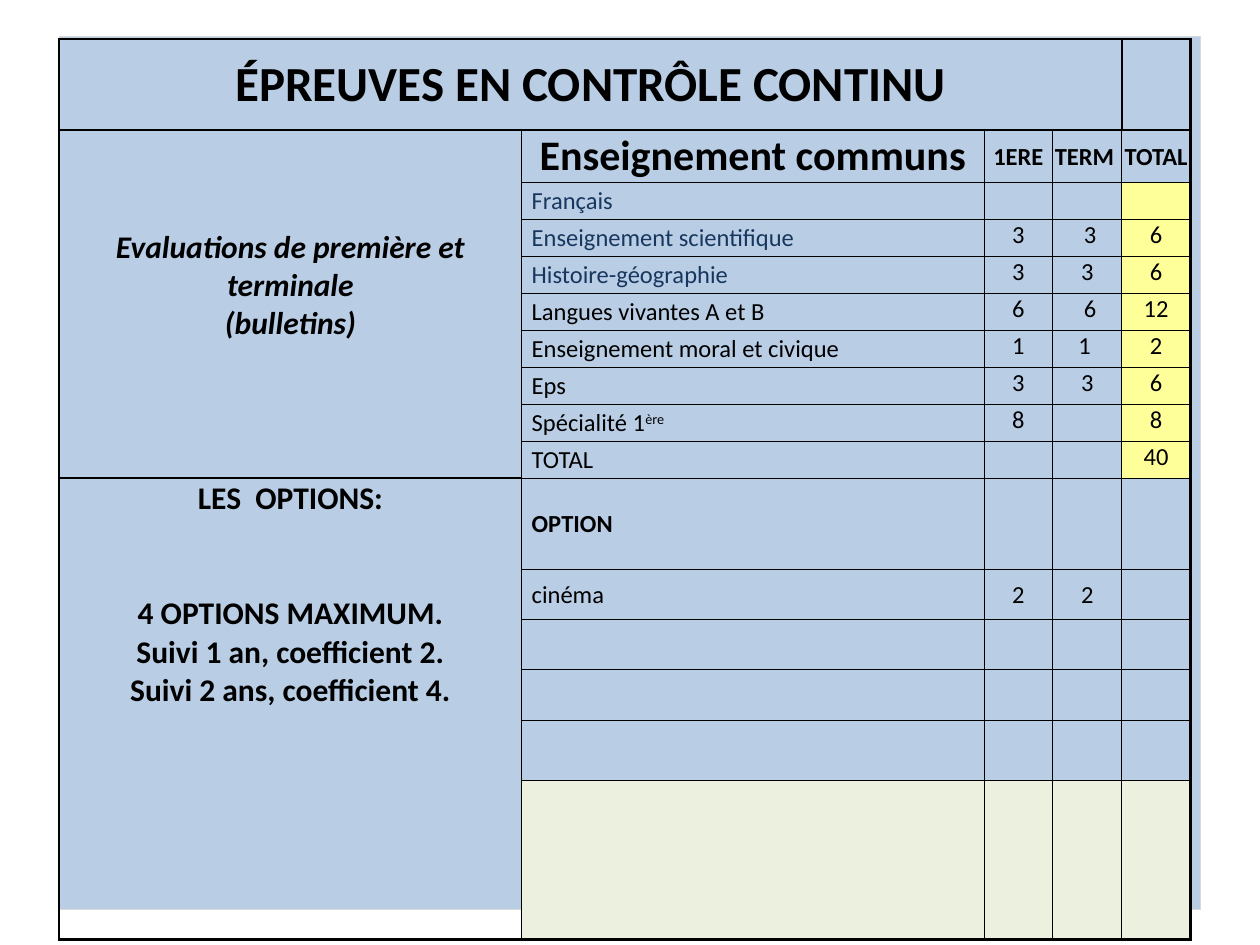
from dataclasses import dataclass

from lxml.etree import SubElement
from pptx import Presentation
from pptx.dml.color import RGBColor
from pptx.enum.shapes import MSO_SHAPE
from pptx.enum.text import MSO_ANCHOR, PP_ALIGN
from pptx.oxml.ns import qn
from pptx.util import Inches, Pt


@dataclass(frozen=True)
class Theme:
    font: str = "Calibri"
    ink: str = "000000"
    navy: str = "17375E"
    panel: str = "B9CDE5"
    edge: str = "D9D9D9"
    total: str = "FFFF99"
    foot: str = "EBF1DE"
    title: int = 28
    head: int = 24
    side: int = 18
    body: int = 14
    thin: float = 0.5
    thick: float = 1.5


THEME = Theme()
COLS = [3.67, 3.67] + [1.64 / 3] * 3
ROWS = [0.72, 0.41] + [2.35 / 8] * 8 + [0.72] + [0.4] * 3 + [0.48, 1.26]
HEAD, FIRST, OPTION, LAST = 1, 2, 10, len(ROWS) - 1
END = len(COLS) - 1
SUBJECTS = [
    ("Français", "", "", ""),
    ("Enseignement scientifique", "3", " 3", "6"),
    ("Histoire-géographie", "3", "3", "6"),
    ("Langues vivantes A et B", "6", " 6", "12"),
    ("Enseignement moral et civique", "1", "1 ", "2"),
    ("Eps", "3", "3", "6"),
    ("Spécialité 1", "8", "", "8"),
    ("TOTAL", "", "", "40"),
]


def color(code):
    return RGBColor.from_string(code)


def style(run, size, ink, bold, slant):
    font = run.font
    font.name, font.size = THEME.font, Pt(size)
    font.bold, font.italic = bold, slant
    font.color.rgb = color(ink)


def write(cell, *lines, size=THEME.body, ink=THEME.ink, bold=False, slant=False,
          align=PP_ALIGN.CENTER, anchor=MSO_ANCHOR.MIDDLE, left=0.01, base=0,
          gap=0, raised=""):
    cell.vertical_anchor = anchor
    cell.margin_left, cell.margin_right = Inches(left), Inches(0.01)
    cell.margin_top, cell.margin_bottom = Inches(0.01), Inches(base)
    frame = cell.text_frame
    for num, line in enumerate(lines):
        para = frame.add_paragraph() if num else frame.paragraphs[0]
        para.text, para.alignment = line, align
        for run in para.runs:
            style(run, size, ink, bold, slant)
        if not line:
            para._p.get_or_add_endParaRPr().set("sz", str(size * 100))
    if raised:
        run = para.add_run()
        run.text = raised
        style(run, size, ink, bold, slant)
        run._r.get_or_add_rPr().set("baseline", "30000")
    if gap:
        frame.paragraphs[0].space_after = Pt(gap)


def border(cell, side, wide):
    line = SubElement(cell._tc.get_or_add_tcPr(), qn(f"a:ln{side}"),
                      w=str(Pt(THEME.thick if wide else THEME.thin)))
    fill = SubElement(line, qn("a:solidFill"))
    SubElement(fill, qn("a:srgbClr"), val=THEME.ink)


def rule(cell, row, col):
    low = row + (cell.span_height if cell.is_merge_origin else 1) - 1
    right = col + (cell.span_width if cell.is_merge_origin else 1) - 1
    border(cell, "L", col == 0 or row == 0)
    border(cell, "R", right == END or row == 0)
    border(cell, "T", row <= HEAD or col == 0)
    border(cell, "B", row == 0 or low == LAST or col == 0)


def paint(cell, row, col):
    if row == LAST:
        code = THEME.foot
    elif col == END and FIRST <= row < OPTION:
        code = THEME.total
    else:
        cell.fill.background()
        return
    cell.fill.solid()
    cell.fill.fore_color.rgb = color(code)


def panel(slide):
    shape = slide.shapes.add_shape(MSO_SHAPE.RECTANGLE, Inches(0.47), Inches(0.29),
                                   Inches(9.06), Inches(6.93))
    shape.shadow.inherit = False
    shape.fill.solid()
    shape.fill.fore_color.rgb = color(THEME.panel)
    shape.line.color.rgb = color(THEME.edge)
    shape.line.width = Pt(0.75)


def grid(slide):
    table = slide.shapes.add_table(len(ROWS), len(COLS), Inches(0.47), Inches(0.31),
                                   Inches(sum(COLS)), Inches(sum(ROWS))).table
    table.first_row = table.horz_banding = False
    for col, width in zip(table.columns, COLS):
        col.width = Inches(width)
    for row, height in zip(table.rows, ROWS):
        row.height = Inches(height)
    table.cell(0, 0).merge(table.cell(0, END - 1))
    table.cell(HEAD, 0).merge(table.cell(OPTION - 1, 0))
    table.cell(OPTION, 0).merge(table.cell(LAST, 0))
    for row in range(len(ROWS)):
        for col in range(len(COLS)):
            cell = table.cell(row, col)
            if not cell.is_spanned:
                rule(cell, row, col)
                paint(cell, row, col)
                write(cell, "")
    return table


def label(cell, text, **form):
    write(cell, text, align=PP_ALIGN.LEFT, left=0.08, **form)


def heads(table):
    write(table.cell(0, 0), "ÉPREUVES EN CONTRÔLE CONTINU", size=THEME.title, bold=True)
    write(table.cell(HEAD, 1), "Enseignement communs", size=THEME.head, bold=True)
    for col, text in enumerate(("1ERE", "TERM ", "TOTAL"), 2):
        write(table.cell(HEAD, col), text, bold=True)


def sides(table):
    write(table.cell(HEAD, 0), """Evaluations de première et terminale
(bulletins)""", size=THEME.side, bold=True, slant=True, base=0.3)
    write(table.cell(OPTION, 0), "LES  OPTIONS:", "4 OPTIONS MAXIMUM.",
          "Suivi 1 an, coefficient 2.", "Suivi 2 ans, coefficient 4.",
          size=THEME.side, bold=True, anchor=MSO_ANCHOR.TOP, gap=44)


def marks(table):
    for row, (name, *notes) in enumerate(SUBJECTS, FIRST):
        label(table.cell(row, 1), name,
              ink=THEME.navy if row < FIRST + 3 else THEME.ink,
              raised="ère" if name.startswith("Spécialité") else "")
        for col, note in enumerate(notes, 2):
            write(table.cell(row, col), note, anchor=MSO_ANCHOR.TOP)


def options(table):
    label(table.cell(OPTION, 1), "OPTION", bold=True)
    label(table.cell(OPTION + 1, 1), "cinéma")
    for col in (2, 3):
        write(table.cell(OPTION + 1, col), "2")


def main():
    deck = Presentation()
    deck.slide_width, deck.slide_height = Inches(10), Inches(7.5)
    slide = deck.slides.add_slide(deck.slide_layouts[6])
    panel(slide)
    table = grid(slide)
    heads(table)
    sides(table)
    marks(table)
    options(table)
    deck.save("out.pptx")


if __name__ == "__main__":
    main()
